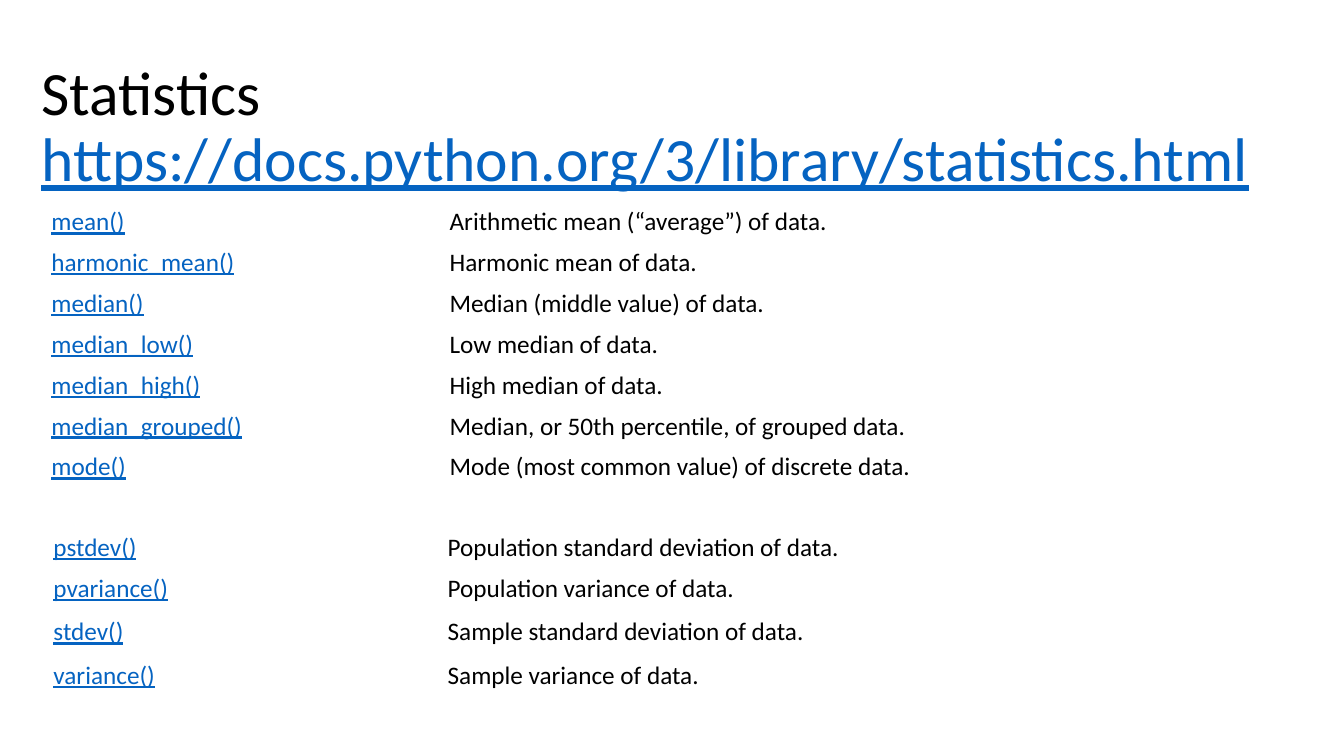
from dataclasses import dataclass

from pptx import Presentation
from pptx.dml.color import RGBColor
from pptx.enum.text import MSO_ANCHOR, MSO_AUTO_SIZE, PP_ALIGN
from pptx.util import Inches, Pt


@dataclass(frozen=True)
class Theme:
    font: str = "Calibri"
    text: str = "000000"
    link: str = "0563C1"
    title_size: int = 44
    body_size: int = 18
    row_height: float = 0.4


AVERAGES = [
    ("mean()", "Arithmetic mean (“average”) of data."),
    ("harmonic_mean()", "Harmonic mean of data."),
    ("median()", "Median (middle value) of data."),
    ("median_low()", "Low median of data."),
    ("median_high()", "High median of data."),
    ("median_grouped()", "Median, or 50th percentile, of grouped data."),
    ("mode()", "Mode (most common value) of discrete data."),
]
SPREAD = [
    ("pstdev()", "Population standard deviation of data."),
    ("pvariance()", "Population variance of data."),
    ("stdev()", "Sample standard deviation of data."),
    ("variance()", "Sample variance of data."),
]


class SlideBuilder:
    def __init__(self, prs, theme):
        self.theme = theme
        self.s = prs.slides.add_slide(prs.slide_layouts[5])

    def run(self, p, text, size, link=False):
        r = p.add_run()
        r.text = text
        r.font.name = self.theme.font
        r.font.size = Pt(size)
        r.font.underline = link
        r.font.color.rgb = RGBColor.from_string(
            self.theme.link if link else self.theme.text)

    def title(self, heading, address, left, top, width, height):
        sp = self.s.shapes.title
        sp.left, sp.top = Inches(left), Inches(top)
        sp.width, sp.height = Inches(width), Inches(height)
        tf = sp.text_frame
        tf.word_wrap = True
        tf.auto_size = MSO_AUTO_SIZE.NONE
        tf.vertical_anchor = MSO_ANCHOR.MIDDLE
        p = tf.paragraphs[0]
        p.alignment = PP_ALIGN.LEFT
        p.line_spacing = 0.9
        self.run(p, heading, self.theme.title_size)
        p.add_line_break()
        self.run(p, address, self.theme.title_size, link=True)

    def function_table(self, rows, left, top, widths, tall_rows=None):
        """Adds a plain table of functions; tall_rows maps row index to height."""
        heights = [(tall_rows or {}).get(i, self.theme.row_height)
                   for i in range(len(rows))]
        table = self.s.shapes.add_table(
            len(rows), len(widths), Inches(left), Inches(top),
            Inches(sum(widths)), Inches(sum(heights))).table
        table.first_row = table.horz_banding = False
        for column, width in zip(table.columns, widths):
            column.width = Inches(width)
        for row, height, texts in zip(table.rows, heights, rows):
            row.height = Inches(height)
            for i, (cell, text) in enumerate(zip(row.cells, texts)):
                cell.fill.background()
                cell.vertical_anchor = MSO_ANCHOR.MIDDLE
                self.run(cell.text_frame.paragraphs[0], text,
                         self.theme.body_size, link=i == 0)


def main():
    prs = Presentation()
    prs.slide_width, prs.slide_height = Inches(13.33), Inches(7.5)
    slide = SlideBuilder(prs, Theme())
    slide.title("Statistics", "https://docs.python.org/3/library/statistics.html",
                0.31, 0.55, 12.62, 1.45)
    slide.function_table(AVERAGES, 0.41, 2, (3.95, 7.68))
    slide.function_table(SPREAD, 0.43, 5.23, (3.91, 7.59), tall_rows={2: 0.46})
    prs.save("out.pptx")


if __name__ == "__main__":
    main()
